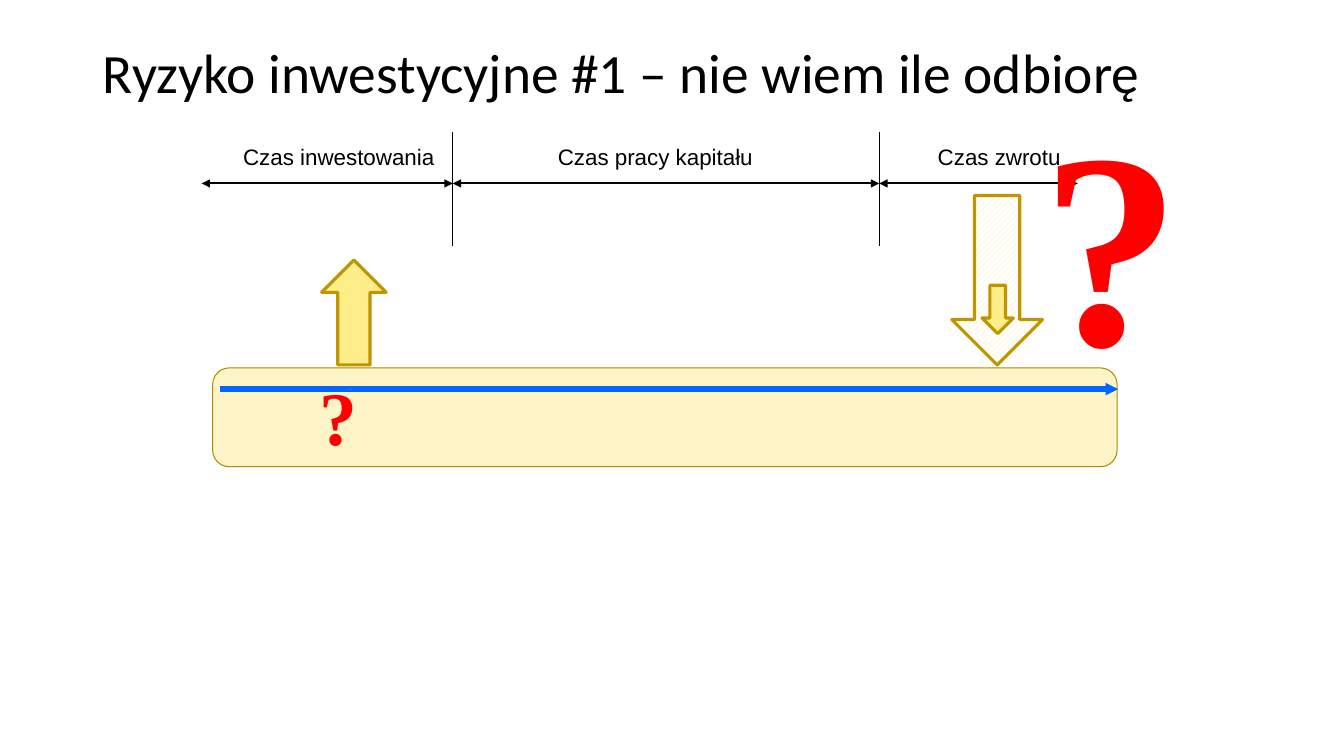
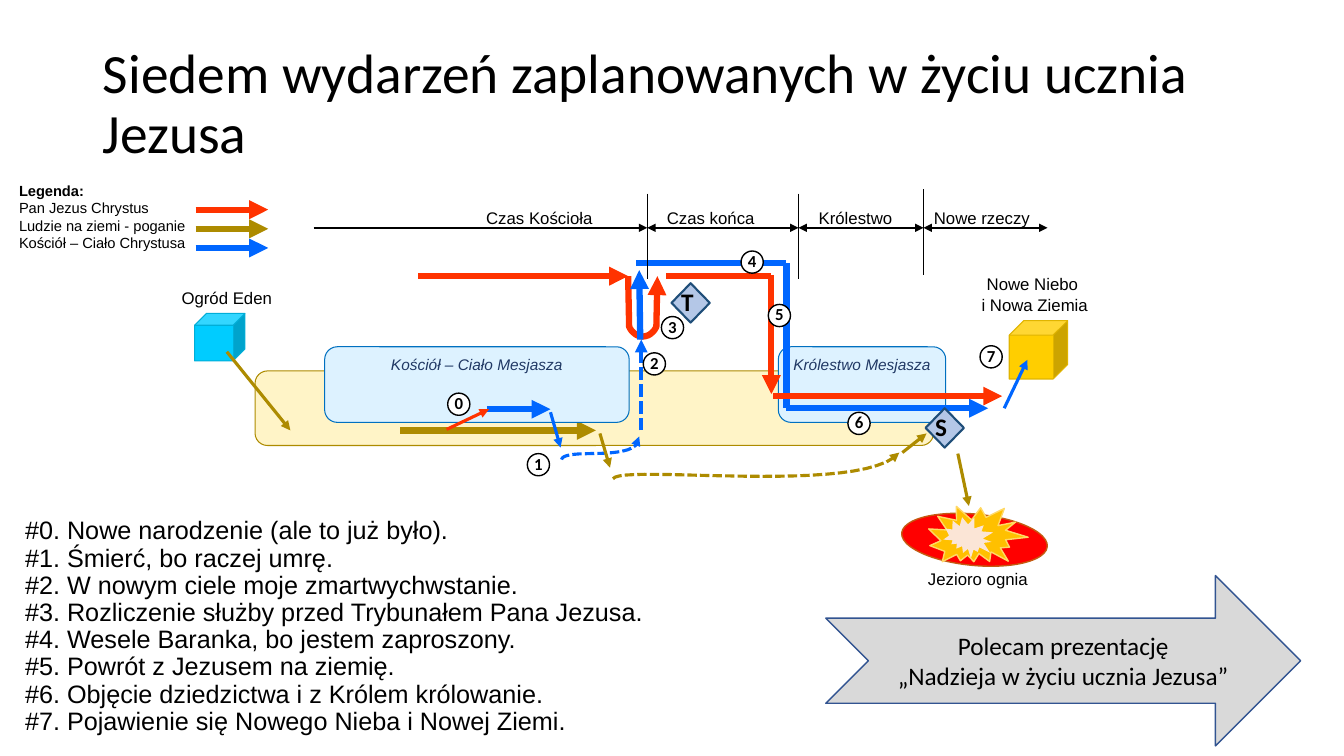
from lxml import etree
from pptx import Presentation
from pptx.dml.color import RGBColor
from pptx.enum import dml, shapes as sh, text as tx
from pptx.oxml.ns import qn
from pptx.util import Inches, Pt

KIND = sh.MSO_SHAPE
ALIGN = tx.PP_ALIGN
ANCHOR = tx.MSO_ANCHOR

# Shared colours
BLACK, WHITE = "000000", "FFFFFF"
RED, FLAME, BLUE = "FF0000", "FF3300", "0066FF"
OLIVE, CREAM, SKY = "AD8B00", "FFF4C7", "DDF2FF"
GOLD, AMBER = "FFED89", "BF9500"

GRID = 1000  # freeform units per inch


def color(code):
    return RGBColor.from_string(code)


def write(shape, paras, size, font="Arial", ink=BLACK, bold=False, italic=False,
          align=ALIGN.CENTER, anchor=ANCHOR.MIDDLE, pad=(0.03, 0.03), space=None,
          wrap=True):
    """Fill a shape with paragraphs; a newline inside one is a line break."""
    frame = shape.text_frame
    frame.word_wrap = wrap
    frame.auto_size = tx.MSO_AUTO_SIZE.NONE
    frame.vertical_anchor = anchor
    frame.margin_left = frame.margin_right = Inches(pad[0])
    frame.margin_top = frame.margin_bottom = Inches(pad[1])
    for i, words in enumerate(paras):
        para = frame.add_paragraph() if i else frame.paragraphs[0]
        para.text = words
        para.alignment = align
        if space:
            para.line_spacing = space
        for run in para.runs:
            face = run.font
            face.name, face.size = font, Pt(size)
            face.bold, face.italic = bold, italic
            face.color.rgb = color(ink)
    return frame


def box(slide, at, paras, size, **style):
    shape = slide.shapes.add_textbox(*map(Inches, at))
    return write(shape, paras, size, **style)


def block(slide, kind, at, fill, edge=None, width=0.75, turn=0):
    shape = slide.shapes.add_shape(kind, *map(Inches, at))
    shape.shadow.inherit = False
    shape.rotation = turn
    shape.fill.solid()
    shape.fill.fore_color.rgb = color(fill)
    if edge:
        shape.line.color.rgb = color(edge)
        shape.line.width = Pt(width)
    else:
        shape.line.fill.background()
    return shape


def stroke(shape, ink, width, head, tail, dash, tip="med"):
    """Style an outline; head and tail are arrows at its start and end."""
    shape.line.color.rgb = color(ink)
    shape.line.width = Pt(width)
    if dash:
        shape.line.dash_style = dml.MSO_LINE.SQUARE_DOT
    edge = shape.element.spPr.find(qn("a:ln"))
    for tag, use in (("a:headEnd", head), ("a:tailEnd", tail)):
        if use:
            etree.SubElement(edge, qn(tag), type="triangle", w=tip, len=tip)


def line(slide, start, end, ink=BLACK, width=2.25, head=False, tail=True, dash=False,
         tip="med"):
    ends = map(Inches, (*start, *end))
    link = slide.shapes.add_connector(sh.MSO_CONNECTOR.STRAIGHT, *ends)
    stroke(link, ink, width, head, tail, dash, tip)
    etree.SubElement(link.element.spPr, qn("a:effectLst"))


def bend(a, b, c, d, steps=24):
    """Points along a cubic curve."""
    def mix(t, i):
        u = 1 - t
        return u**3 * a[i] + 3 * u * u * t * b[i] + 3 * u * t * t * c[i] + t**3 * d[i]
    return [(mix(n / steps, 0), mix(n / steps, 1)) for n in range(steps + 1)]


def trail(slide, points, ink, width=2.25, dash=True):
    # Freeform points are whole numbers, so a fine grid is needed
    spots = [(round(x * GRID), round(y * GRID)) for x, y in points]
    draft = slide.shapes.build_freeform(*spots[0], scale=Inches(1) / GRID)
    draft.add_line_segments(spots[1:], close=False)
    shape = draft.convert_to_shape()
    shape.shadow.inherit = False
    shape.fill.background()
    stroke(shape, ink, width, False, True, dash)


def start(deck, title):
    slide = deck.slides.add_slide(deck.slide_layouts[5])
    head = slide.shapes.title
    head.left, head.top, head.width, head.height = map(Inches, (0.92, 0.4, 11.5, 0.78))
    write(head, [title], 39.6, "Calibri", align=ALIGN.LEFT, anchor=ANCHOR.TOP,
          pad=(0.1, 0.05), space=0.9)
    return slide


def axis(slide, stops, y, ticks, first=True):
    """Time axis: a span between neighbouring stops, a tick at inner ones."""
    for i, (left, right) in enumerate(zip(stops, stops[1:])):
        line(slide, (left, y), (right, y), width=1.5, head=first or i > 0)
    for x, (top, low) in zip(stops[1:-1], ticks):
        line(slide, (x, top), (x, low), width=0.5, tail=False)


def labels(slide, items, top, height, size):
    for words, left, width in items:
        box(slide, (left, top, width, height), [words], size)


def risk(deck):
    slide = start(deck, "Ryzyko inwestycyjne #1 – nie wiem ile odbiorę")
    block(slide, KIND.ROUNDED_RECTANGLE, (2.11, 3.65, 8.97, 0.98), CREAM, OLIVE)

    # Time axis
    labels(slide, [("Czas inwestowania", 2.15, 2.42), ("Czas pracy kapitału", 4.83, 3.34),
                   ("Czas zwrotu", 9.07, 1.68)], 1.38, 0.35, 16)
    axis(slide, (2, 4.49, 8.72, 10.69), 1.82, [(1.31, 2.44)] * 2)

    # Money in, question marks, money out
    arrow = KIND.DOWN_ARROW
    block(slide, arrow, (3.19, 2.58, 0.64, 1.04), GOLD, AMBER, 2.25, 180)
    line(slide, (2.18, 3.86), (11.09, 3.86), BLUE, 4.5, tip="sm")
    for at, size in (((10.23, 0.61, 1.12, 3.45), 199), ((3.07, 3.62, 1.12, 1.01), 54)):
        box(slide, at, ["?"], size, font="Times New Roman", ink=RED, bold=True,
            align=ALIGN.LEFT, anchor=ANCHOR.TOP, pad=(0.1, 0.05))
    fill = block(slide, arrow, (9.44, 1.94, 0.9, 1.68), GOLD, AMBER, 2.25).fill
    fill.patterned()
    fill.pattern = dml.MSO_PATTERN.WIDE_UPWARD_DIAGONAL
    fill.fore_color.rgb, fill.back_color.rgb = color(GOLD), color(WHITE)
    block(slide, arrow, (9.74, 2.83, 0.31, 0.48), GOLD, AMBER, 2.25)


def zones(slide):
    block(slide, KIND.ROUNDED_RECTANGLE, (2.53, 3.68, 6.73, 0.74), CREAM, OLIVE)
    line(slide, (3.97, 4.27), (5.91, 4.27), OLIVE, 4.5)
    for words, left, width in (("Królestwo Mesjasza", 7.72, 1.66),
                               ("Kościół – Ciało Mesjasza", 3.22, 3.02)):
        zone = block(slide, KIND.ROUNDED_RECTANGLE, (left, 3.44, width, 0.75), SKY, "0070C0")
        write(zone, [words], 11, ink="203864", italic=True, anchor=ANCHOR.TOP,
              pad=(0.1, 0.05), wrap=False)


def routes(slide):
    # Thick routes
    for a, b, ink, tail in (
            ((4.15, 2.74), (6.23, 2.74), FLAME, True),
            ((4.83, 4.06), (5.46, 4.06), BLUE, True),
            ((6.31, 2.61), (7.8, 2.61), BLUE, False),
            ((7.65, 2.73), (7.65, 3.91), FLAME, True),
            ((6.61, 2.74), (7.65, 2.74), FLAME, False),
            ((7.8, 2.61), (7.8, 4.05), BLUE, False),
            ((7.67, 3.93), (9.94, 3.93), FLAME, True),
            ((7.8, 4.05), (9.8, 4.05), BLUE, True)):
        line(slide, a, b, ink, 4.5, tail=tail)
    dip = bend((6.24, 3.24), (6.3, 3.37), (6.45, 3.37), (6.51, 3.24))
    trail(slide, [(6.23, 2.74), *dip, (6.52, 2.74)], FLAME, 4.5, False)
    line(slide, (6.35, 3.37), (6.34, 2.68), BLUE, 4.5)

    # Dashed routes
    line(slide, (6.36, 4.27), (6.36, 3.37), BLUE, 3, dash=True)
    trail(slide, bend((5.57, 4.56), (5.6, 4.43), (6.35, 4.6), (6.34, 4.33)), BLUE)
    trail(slide, bend((6.08, 4.75), (6.15, 4.6), (8.57, 4.92), (8.92, 4.49)), OLIVE)

    # Thin steps
    for a, b, ink in (((8.95, 4.49), (9.19, 4.3), OLIVE), ((5.95, 4.3), (6.05, 4.64), OLIVE),
                      ((5.46, 4.09), (5.56, 4.44), BLUE), ((9.5, 4.5), (9.61, 5.02), OLIVE),
                      ((4.43, 4.26), (4.85, 4.06), FLAME)):
        line(slide, a, b, ink)


def places(slide):
    for mark, left, top in (("T", 6.66, 2.81), ("S", 9.18, 4.05)):
        gem = block(slide, KIND.DIAMOND, (left, top, 0.38, 0.39), "B4C7E7", "1F4E79", 1.5)
        write(gem, [mark], 18, "Calibri", bold=True, align=ALIGN.LEFT, pad=(0, 0.04),
              space=0.9)

    # Lake of fire
    block(slide, KIND.FLOWCHART_CONNECTOR, (8.94, 5.1, 1.45, 0.51), RED, "C55A11", 1, 5.4)
    burst = KIND.EXPLOSION2
    block(slide, burst, (9.21, 4.98, 0.97, 0.68), "FFC000", "FFD966", 1, 16.2)
    block(slide, burst, (9.38, 5.11, 0.47, 0.45), "FBE5D6", turn=56.2)

    # Eden and the new world
    block(slide, KIND.CUBE, (10.01, 3.18, 0.58, 0.58), "FFCE00", "E0B400")
    line(slide, (9.96, 4.05), (10.19, 3.57), BLUE)
    block(slide, KIND.CUBE, (1.93, 3.11, 0.5, 0.47), "00CCFF", "00AED8")
    line(slide, (2.25, 3.49), (2.88, 4.27), OLIVE)
    for words, left, top, height in (("Jezioro ognia", 8.98, 5.61, 0.26),
                                     ("Ogród Eden", 1.53, 2.82, 0.26),
                                     ("Nowe Niebo\n i Nowa Ziemia", 9.52, 2.69, 0.46)):
        box(slide, (left, top, 1.44, height), [words], 12)


def legend(slide):
    for y, ink in ((2.46, BLUE), (2.27, OLIVE), (2.08, FLAME)):
        line(slide, (1.94, y), (2.66, y), ink, 4.5)
    frame = box(slide, (0.09, 1.75, 1.99, 0.81),
                ["Legenda:", "Pan Jezus Chrystus", "Ludzie na ziemi - poganie",
                 "Kościół – Ciało Chrystusa"],
                10.5, align=ALIGN.LEFT, anchor=ANCHOR.TOP, pad=(0.1, 0.05))
    frame.paragraphs[0].runs[0].font.bold = True


def events(deck):
    slide = start(deck, "Siedem wydarzeń zaplanowanych w życiu ucznia Jezusa")
    zones(slide)
    routes(slide)

    # Time axis
    axis(slide, (3.11, 6.42, 7.92, 9.16, 10.39), 2.26,
         [(1.92, 2.77), (1.92, 2.77), (1.88, 2.73)], first=False)
    labels(slide, [("Czas Kościoła", 4.63, 1.44), ("Czas końca", 6.48, 1.14),
                   ("Królestwo", 8.02, 0.93), ("Nowe rzeczy", 9.16, 1.16)], 2.03, 0.26, 12)
    places(slide)

    # Event numbers, from 0 to 7
    spots = ((4.44, 3.9), (5.23, 4.5), (6.38, 3.5), (6.56, 3.14),
             (7.35, 2.49), (7.62, 3.02), (8.41, 4.09), (9.72, 3.43))
    for i, spot in enumerate(spots):
        disc = block(slide, KIND.OVAL, (*spot, 0.22, 0.22), WHITE, BLACK, 1)
        write(disc, [str(i)], 12, "Calibri", bold=True, pad=(0, 0), space=0.9, wrap=False)

    # Event list
    names = ("Nowe narodzenie (ale to już było).", "Śmierć, bo raczej umrę.",
             "W nowym ciele moje zmartwychwstanie.",
             "Rozliczenie służby przed Trybunałem Pana Jezusa.",
             "Wesele Baranka, bo jestem zaproszony.", "Powrót z Jezusem na ziemię.",
             "Objęcie dziedzictwa i z Królem królowanie.",
             "Pojawienie się Nowego Nieba i Nowej Ziemi.")
    box(slide, (0.15, 5.09, 8.62, 2.23), [f"#{i}. {name}" for i, name in enumerate(names)],
        18, align=ALIGN.LEFT, anchor=ANCHOR.TOP, pad=(0.1, 0.05), space=0.9)
    legend(slide)

    # Closing arrow
    arrow = block(slide, KIND.NOTCHED_RIGHT_ARROW, (8.19, 5.71, 4.71, 1.69), "D9D9D9",
                  "325491", 1)
    write(arrow, ["Polecam prezentację\n„Nadzieja w życiu ucznia Jezusa”"], 18, "Calibri",
          pad=(0.1, 0.05))


def main():
    deck = Presentation()
    deck.slide_width, deck.slide_height = Inches(13.33), Inches(7.5)
    risk(deck)
    events(deck)
    deck.save("out.pptx")


if __name__ == "__main__":
    main()
